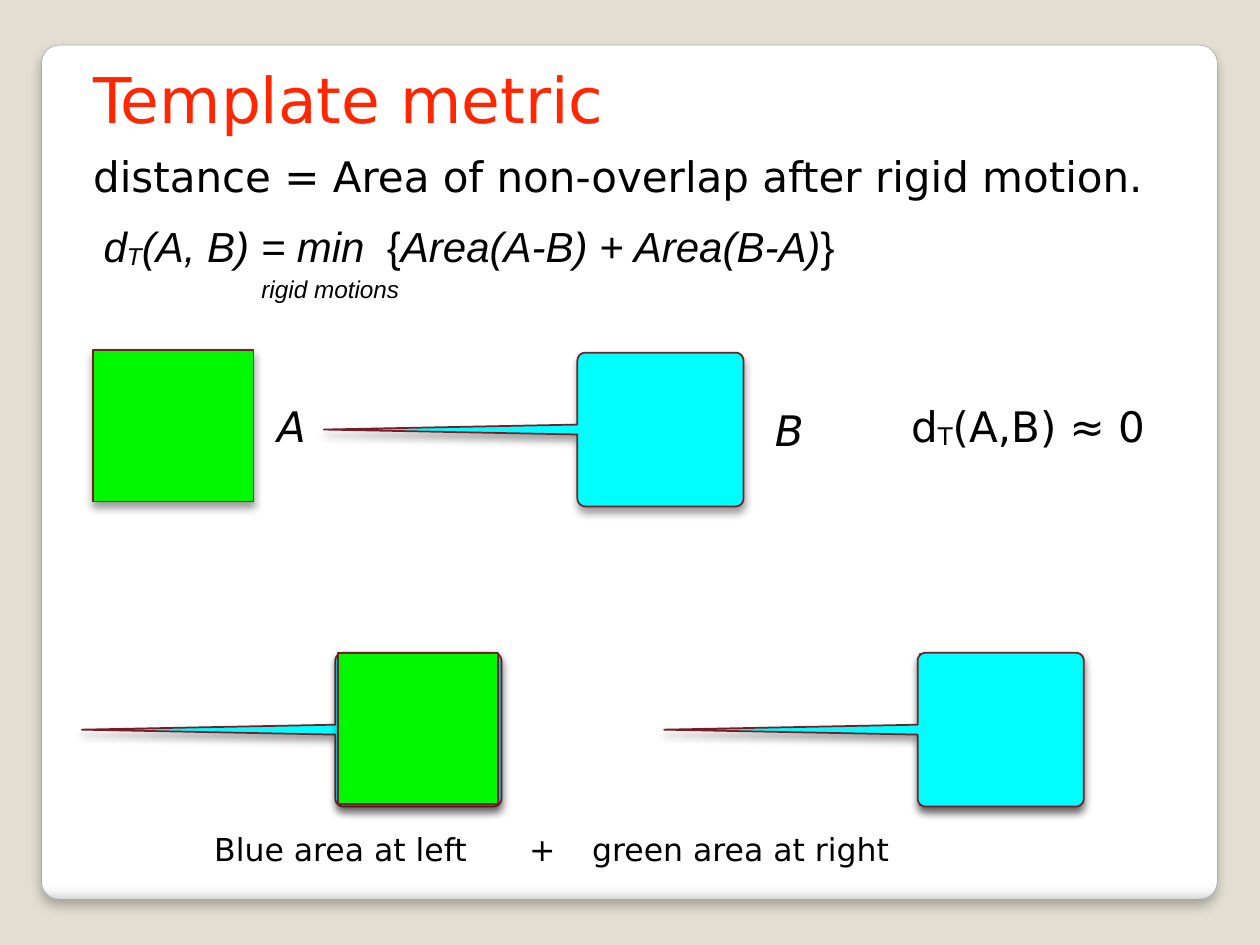
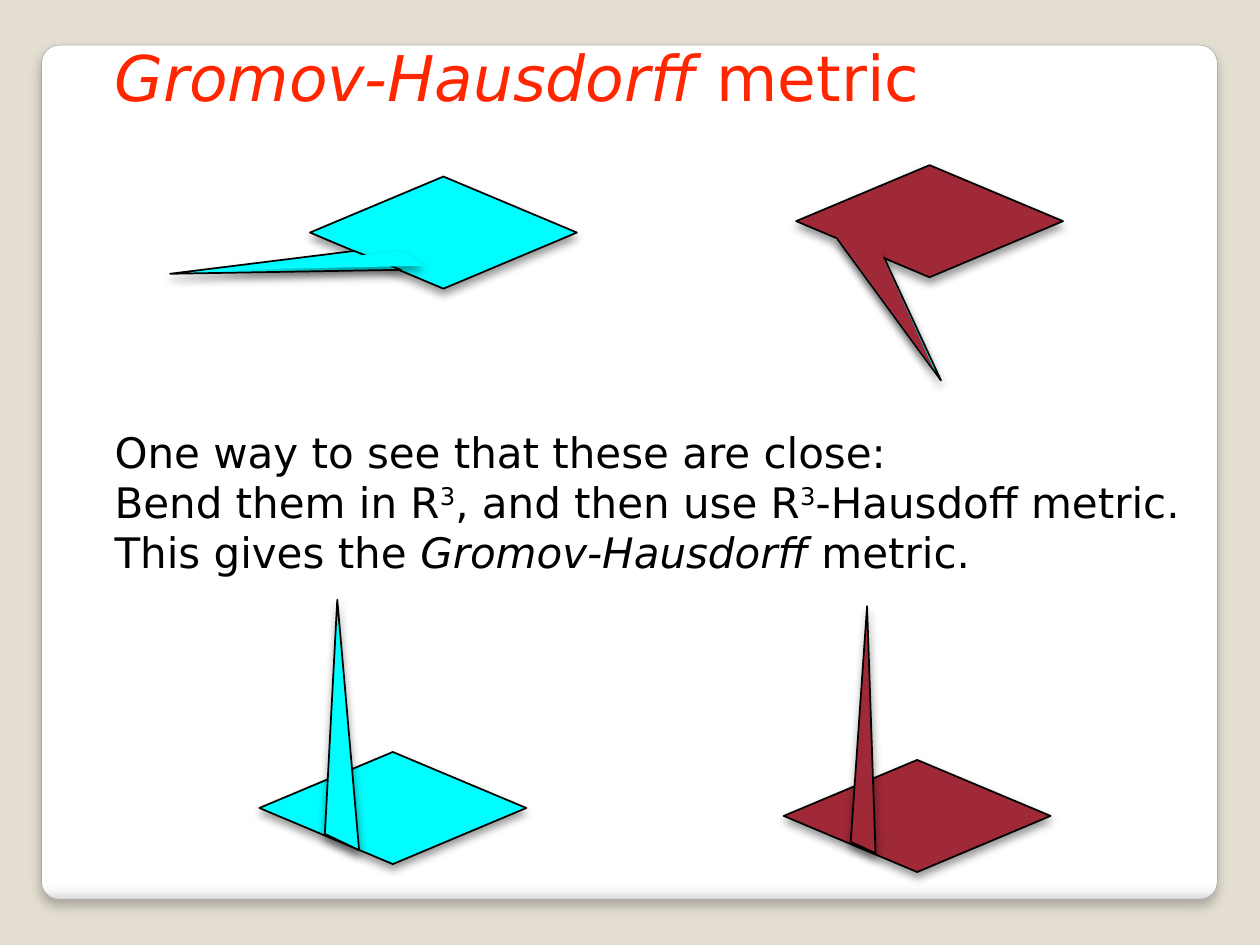
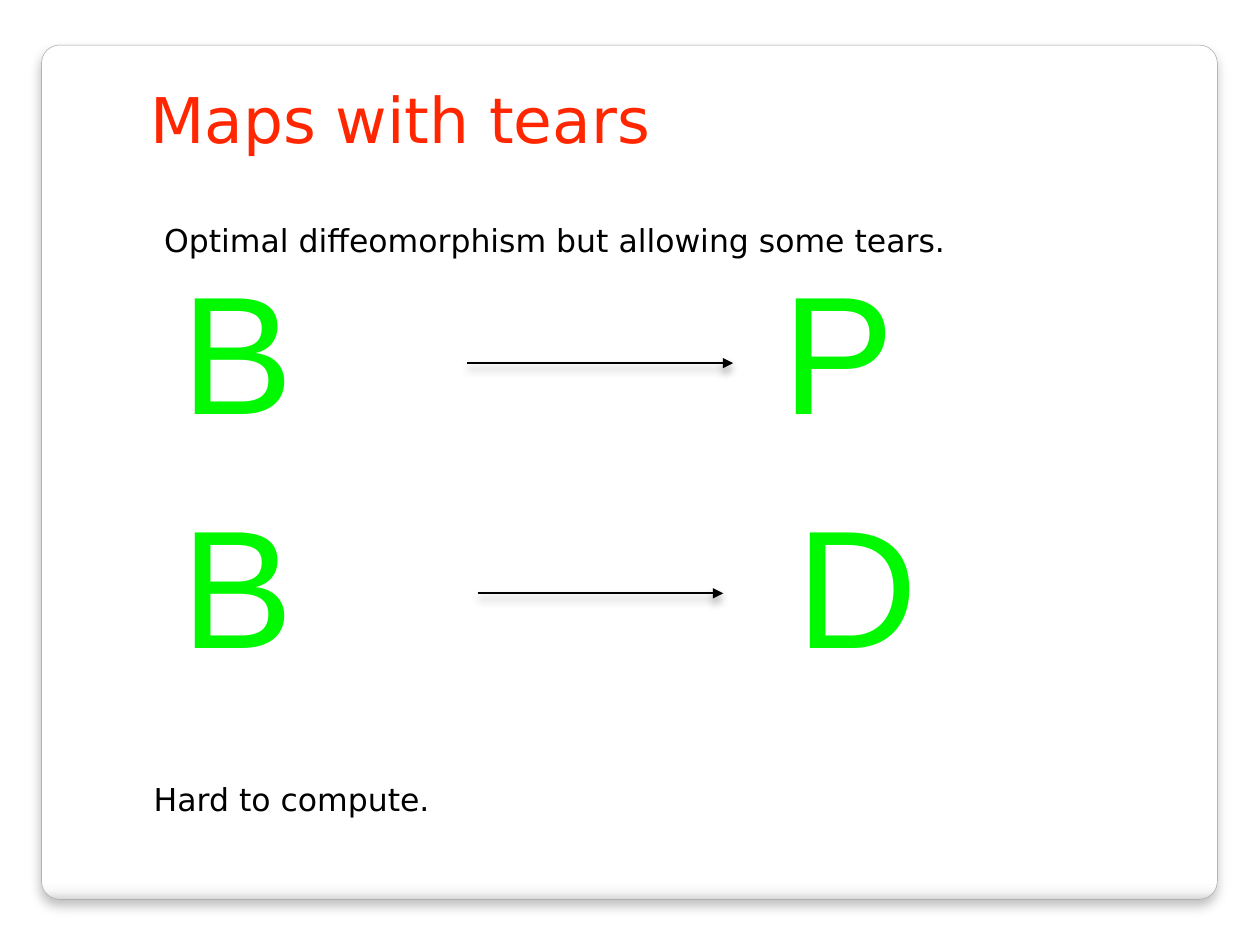
"""Build three slides on metrics between shapes."""
from math import cos, radians, sin

from lxml.etree import SubElement
from pptx import Presentation
from pptx.dml.color import RGBColor
from pptx.enum.shapes import MSO_CONNECTOR, MSO_SHAPE
from pptx.enum.text import MSO_ANCHOR
from pptx.oxml.ns import qn
from pptx.util import Cm, Pt

BLACK = RGBColor(0x00, 0x00, 0x00)
WHITE = RGBColor(0xFF, 0xFF, 0xFF)
SAND = RGBColor(0xE3, 0xDE, 0xD1)
RED = RGBColor(0xFF, 0x26, 0x00)
GREEN = RGBColor(0x00, 0xF9, 0x00)
CYAN = RGBColor(0x00, 0xFD, 0xFF)
CRIMSON = RGBColor(0x9F, 0x29, 0x36)
MAROON = RGBColor(0x74, 0x1E, 0x27)
GREY = RGBColor(0xA2, 0xA1, 0xA1)

CARD_STOPS = [(0, "FFFFFF"), (98, "FFFFFF"), (99, "F7F7F7"), (100, "D9D9D9")]
BODY_FONT, FORMULA_FONT = "DejaVu Sans", "Arial"
INSET = Cm(0.13)
ITALIC = {"italic": True}
SUBSCRIPT, SUPERSCRIPT = -6, 32
SQUARE_SIZE = (3.23, 3.05)
DIAMOND = [(0, 1.13), (2.69, 2.26), (5.38, 1.13), (2.69, 0)]


def add_shadow(shape, alpha=40, blur=5, distance=3):
    """Give a shape a soft shadow that falls straight down."""
    effects = SubElement(shape.element.spPr, qn("a:effectLst"))
    shadow = SubElement(effects, qn("a:outerShdw"), blurRad=str(Pt(blur)),
                        dist=str(Pt(distance)), dir="5400000", rotWithShape="0")
    colour = SubElement(shadow, qn("a:srgbClr"), val="000000")
    SubElement(colour, qn("a:alpha"), val=str(alpha * 1000))


def paint(shape, fill, outline):
    """Set the fill, outline and shadow of a figure."""
    shape.fill.solid()
    shape.fill.fore_color.rgb = fill
    if outline is None:
        shape.line.fill.background()
    else:
        shape.line.color.rgb = outline
        shape.line.width = Pt(1)
    add_shadow(shape)


def add_polygon(page, left, top, points, fill, outline=BLACK):
    """Draw a closed outline whose points are relative to left and top."""
    start, *others = [(Cm(x), Cm(y)) for x, y in points]
    builder = page.shapes.build_freeform(*start, scale=1.0)
    builder.add_line_segments(others, close=True)
    paint(builder.convert_to_shape(Cm(left), Cm(top)), fill, outline)


def add_text(page, box, paragraphs, size=24, font=BODY_FONT, colour=BLACK,
             indent=0, before=0, tabs=()):
    """Write paragraphs of (text, formats, baseline) spans or plain strings."""
    frame = page.shapes.add_textbox(*map(Cm, box)).text_frame
    settings = {"word_wrap": True, "vertical_anchor": MSO_ANCHOR.TOP,
                "margin_left": INSET, "margin_right": INSET,
                "margin_top": INSET, "margin_bottom": INSET}
    for name, value in settings.items():
        setattr(frame, name, value)
    for index, spans in enumerate(paragraphs):
        para = frame.paragraphs[0] if index == 0 else frame.add_paragraph()
        para.space_before = Pt(before)
        properties = para._p.get_or_add_pPr()
        properties.set("marL", "0")
        properties.set("indent", str(Cm(indent)))
        if tabs:
            stops = SubElement(properties, qn("a:tabLst"))
            for position in tabs:
                SubElement(stops, qn("a:tab"), pos=str(Cm(position)), algn="l")
        for item in [spans] if isinstance(spans, str) else spans:
            text, formats, baseline = (item, {}, 0) if isinstance(item, str) else item
            span = para.add_run()
            span.text = text
            span.font.color.rgb = colour
            for name, value in ({"size": Pt(size), "name": font} | formats).items():
                setattr(span.font, name, value)
            if baseline:
                span.font._element.set("baseline", str(baseline * 1000))


def add_title(page, box, spans):
    """Write the large red title."""
    add_text(page, box, [spans], size=36, colour=RED)


def add_page(deck, background=SAND):
    """Add a page with its background and rounded white card."""
    page = deck.slides.add_slide(deck.slide_layouts[6])
    page.background.fill.solid()
    page.background.fill.fore_color.rgb = background
    card = page.shapes.add_shape(MSO_SHAPE.ROUNDED_RECTANGLE,
                                 *map(Cm, (0.84, 0.91, 23.7, 17.22)))
    card.adjustments[0] = 0.021
    card.fill.gradient()
    card.fill.gradient_angle = 270
    stops = card.element.spPr.find(qn("a:gradFill")).find(qn("a:gsLst"))
    for stop in list(stops):
        stops.remove(stop)
    for position, value in CARD_STOPS:
        stop = SubElement(stops, qn("a:gs"), pos=str(position * 1000))
        SubElement(stop, qn("a:srgbClr"), val=value)
    card.line.color.rgb = GREY
    card.line.width = Pt(0.25)
    add_shadow(card, alpha=25, blur=6, distance=4)
    return page


def add_square(page, left, top):
    """Draw the green square A."""
    square = page.shapes.add_shape(MSO_SHAPE.RECTANGLE,
                                   *map(Cm, (left, top, *SQUARE_SIZE)))
    paint(square, GREEN, MAROON)


def add_spiked_square(page, left, top):
    """Draw the rounded blue square B with its thin spike to the left."""
    body_left, right, bottom, radius = 5.11, 8.46, 3.1, 0.16
    corners = [(body_left + radius, bottom - radius, 90),
               (right - radius, bottom - radius, 0),
               (right - radius, radius, -90),
               (body_left + radius, radius, -180)]
    points = [(body_left, 1.45), (0, 1.55), (body_left, 1.65)]
    for x, y, first in corners:
        for step in range(90, -1, -15):
            angle = radians(first + step)
            points.append((x + radius * cos(angle), y + radius * sin(angle)))
    add_polygon(page, left, top, points, CYAN, MAROON)


def add_spiked_diamond(page, left, top, fill, spike, spike_fill=None, cover=None):
    """Draw a diamond with a spike and an optional cover that blends them."""
    add_polygon(page, left, top, DIAMOND, fill)
    add_polygon(page, left, top, spike, spike_fill or fill)
    if cover:
        add_polygon(page, left, top, cover, fill, None)


def add_letter_row(page, top, target, target_left, arrow):
    """Place the letter B, an arrow and the letter it maps to."""
    for letter, left in (("B", 3.53), (target, target_left)):
        add_text(page, (left, top, 5.03, 4.32), [letter],
                 size=96, font=FORMULA_FONT, colour=GREEN)
    start, end, drop = arrow
    line = page.shapes.add_connector(MSO_CONNECTOR.STRAIGHT, Cm(start),
                                     Cm(top + drop), Cm(end), Cm(top + drop))
    line.line.color.rgb = BLACK
    line.line.width = Pt(1)
    SubElement(line.element.spPr.find(qn("a:ln")), qn("a:tailEnd"), type="triangle")
    add_shadow(line)


def add_formula(page, left, top):
    """Write the definition of the template distance."""
    add_text(page, (left, top, 16.2, 2.62),
             [[("d", ITALIC, 0), ("T", ITALIC, SUBSCRIPT),
               ("(A, B) = min\t", ITALIC, 0), "{",
               ("Area(A-B) + Area(B-A)", ITALIC, 0), "}"]],
             font=FORMULA_FONT, indent=0.64, before=12, tabs=[6.24])
    add_text(page, (left + 3.18, top + 0.68, 4.11, 1.22),
             [[("rigid motions", ITALIC, SUBSCRIPT)]],
             font=FORMULA_FONT, indent=0.64, before=12)


def build_template_metric(deck):
    """Build the page on the template metric."""
    page = add_page(deck)
    add_title(page, (1.75, 1.09, 10.57, 1.8), "Template metric")
    add_text(page, (1.75, 2.9, 21.89, 1.27),
             ["distance = Area of non-overlap after rigid motion."])
    for letter, left, top in (("B", 15.49, 8.03), ("A", 5.46, 7.95)):
        add_text(page, (left, top, 1.24, 1.27), [[(letter, ITALIC, 0)]])
    add_text(page, (18.24, 7.95, 5.23, 1.27),
             [["d", ("T", {}, SUBSCRIPT), "(A,B) ≈ 0"]])
    add_formula(page, 1.32, 4.32)
    add_square(page, 1.88, 7.06)
    add_spiked_square(page, 6.53, 7.11)
    add_spiked_square(page, 1.65, 13.16)
    add_square(page, 6.81, 13.16)
    add_square(page, 18.54, 13.18)
    add_spiked_square(page, 13.39, 13.16)
    add_text(page, (4.19, 16.61, 17.55, 1.04),
             ["Blue area at left\t+\tgreen area at right"], size=18, tabs=[7.65, 10.6])


def build_gromov_hausdorff(deck):
    """Build the page on the Gromov-Hausdorff metric."""
    page = add_page(deck)
    name = ("Gromov-Hausdorff", ITALIC, 0)
    cube = ("3", {}, SUPERSCRIPT)
    add_title(page, (2.18, 0.64, 16.59, 1.8), [name, " metric"])
    add_text(page, (2.18, 8.46, 22.3, 3.33),
             ["One way to see that these are close:",
              ["Bend them in R", cube, ", and then use R", cube, "-Hausdoff metric."],
              ["This gives the ", name, " metric."]])
    add_spiked_diamond(page, 5.23, 15.16, CYAN,
                       [(2.01, 1.98), (1.32, 1.65), (1.57, -3.07)])
    add_spiked_diamond(page, 15.8, 15.32, CRIMSON,
                       [(1.85, 1.88), (1.35, 1.65), (1.68, -3.1)])
    add_spiked_diamond(page, 6.25, 3.56, CYAN,
                       [(0.89, 1.5), (1.83, 1.88), (-2.82, 1.96)],
                       cover=[(1.88, 1.5), (2.29, 1.8), (-1.7, 1.88)])
    add_spiked_diamond(page, 16.05, 3.33, CRIMSON,
                       [(0.84, 1.5), (1.78, 1.88), (2.92, 4.34)], CYAN,
                       [(0.79, 1.4), (1.68, 1.7), (2.77, 4.11)])


def build_maps_with_tears(deck):
    """Build the page on maps with tears."""
    page = add_page(deck, WHITE)
    add_text(page, (3.18, 4.32, 16.31, 1.04),
             ["Optimal diffeomorphism but allowing some tears."], size=18)
    add_title(page, (2.9, 1.5, 10.39, 1.8), "Maps with tears")
    add_letter_row(page, 4.83, "P", 15.65, (9.42, 14.78, 2.49))
    add_letter_row(page, 9.55, "D", 15.93, (9.63, 14.58, 2.41))
    add_text(page, (2.97, 15.6, 6.12, 1.8), ["Hard to compute."], size=18)


def main():
    """Build and save the deck."""
    deck = Presentation()
    deck.slide_width, deck.slide_height = Cm(25.4), Cm(19.05)
    build_template_metric(deck)
    build_gromov_hausdorff(deck)
    build_maps_with_tears(deck)
    deck.save("out.pptx")


if __name__ == "__main__":
    main()
